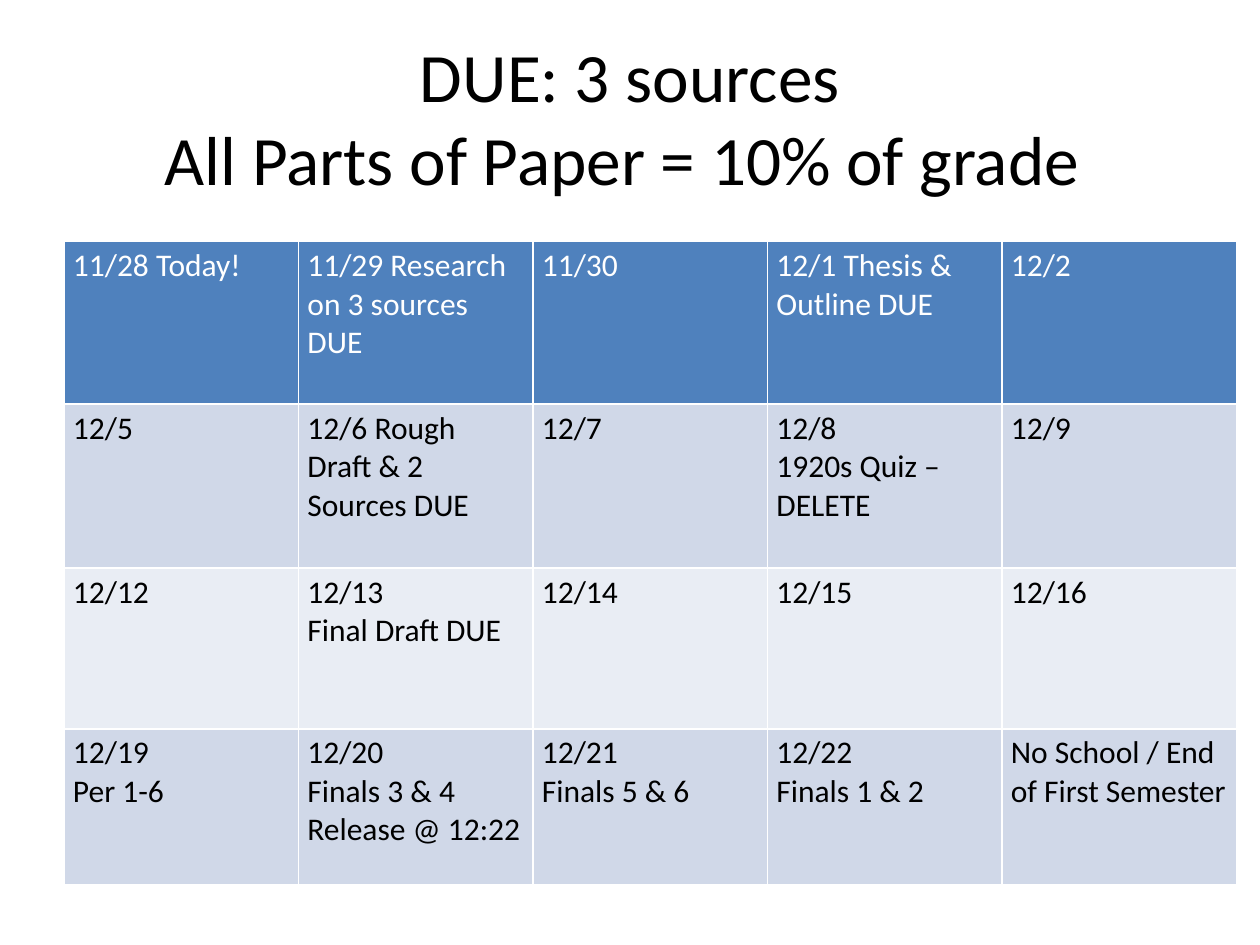
from lxml.etree import SubElement
from pptx import Presentation
from pptx.dml.color import RGBColor
from pptx.enum.text import MSO_ANCHOR, MSO_AUTO_SIZE, PP_ALIGN
from pptx.oxml.ns import qn
from pptx.util import Pt


def color(value):
    return RGBColor.from_string(value)


def write(frame, text, size=18, ink="000000", align=PP_ALIGN.LEFT):
    frame.text = text
    for paragraph in frame.paragraphs:
        paragraph.alignment = align
        for run in paragraph.runs:
            run.font.name = "Calibri"
            run.font.size = Pt(size)
            run.font.bold = False
            run.font.color.rgb = color(ink)


deck = Presentation()
deck.slide_width, deck.slide_height = Pt(720), Pt(540)
slide = deck.slides.add_slide(deck.slide_layouts[5])

heading = slide.shapes.title
heading.left, heading.top, heading.width, heading.height = Pt(36), Pt(21.6), Pt(648), Pt(90)
write(heading.text_frame, "DUE: 3 sources\vAll Parts of Paper = 10% of grade ",
      size=39.6, align=PP_ALIGN.CENTER)
heading.text_frame.vertical_anchor = MSO_ANCHOR.MIDDLE
heading.text_frame.auto_size = MSO_AUTO_SIZE.NONE

weeks = [
    ["11/28 Today!", "11/29 Research on 3 sources DUE", "11/30",
     "12/1 Thesis & Outline DUE", "12/2"],
    ["12/5", "12/6 Rough Draft & 2 Sources DUE", "12/7",
     "12/8\n1920s Quiz – DELETE", "12/9"],
    ["12/12", "12/13\nFinal Draft DUE", "12/14", "12/15", "12/16"],
    ["12/19\nPer 1-6", "12/20\nFinals 3 & 4\nRelease @ 12:22",
     "12/21\nFinals 5 & 6", "12/22\nFinals 1 & 2",
     "No School / End of First Semester"],
]
week_heights = [93, 93.5, 92, 89]
week_fills = ["4F81BD", "D0D8E8", "E9EDF4", "D0D8E8"]

calendar = slide.shapes.add_table(
    len(weeks), len(weeks[0]), Pt(36.5), Pt(138), Pt(670), Pt(sum(week_heights))).table
for day in calendar.columns:
    day.width = Pt(134)

for w, (week, height, fill) in enumerate(zip(weeks, week_heights, week_fills)):
    calendar.rows[w].height = Pt(height)
    for d, entry in enumerate(week):
        cell = calendar.cell(w, d)
        write(cell.text_frame, entry, ink="FFFFFF" if w == 0 else "000000")
        cell.margin_left = cell.margin_right = Pt(5.2)
        cell.margin_top = cell.margin_bottom = Pt(3)
        properties = cell._tc.get_or_add_tcPr()
        for side in ("lnL", "lnR", "lnT", "lnB"):
            border = SubElement(properties, qn(f"a:{side}"), w=str(Pt(1)))
            paint = SubElement(border, qn("a:solidFill"))
            SubElement(paint, qn("a:srgbClr"), val="FFFFFF")
        cell.fill.solid()
        cell.fill.fore_color.rgb = color(fill)

deck.save("out.pptx")
